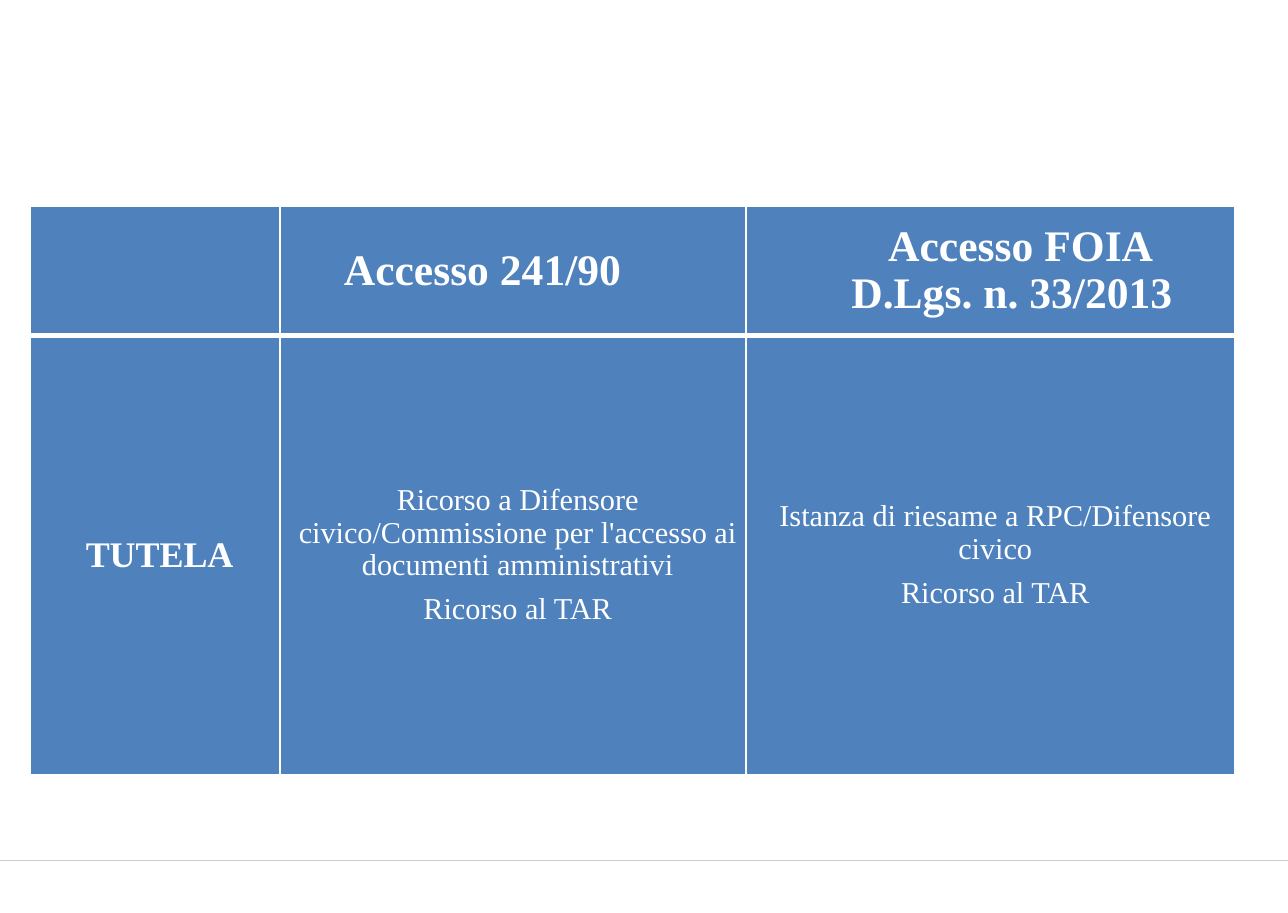
from dataclasses import dataclass

from lxml import etree
from pptx import Presentation
from pptx.dml.color import RGBColor
from pptx.enum.shapes import MSO_CONNECTOR
from pptx.enum.text import MSO_ANCHOR, PP_ALIGN
from pptx.oxml.ns import qn
from pptx.util import Inches, Pt

LINE = MSO_CONNECTOR.STRAIGHT
MIDDLE = MSO_ANCHOR.MIDDLE
LEFT, CENTER = PP_ALIGN.LEFT, PP_ALIGN.CENTER


@dataclass(frozen=True)
class Theme:
    font: str = "Times New Roman"
    blue: str = "4F81BD"
    white: str = "FFFFFF"
    grey: str = "CCCCCC"
    head: int = 23
    label: int = 19
    body: int = 16


theme = Theme()


def write(cell, text, size=theme.body, bold=False, align=CENTER,
          margin=0.07, indent=0, spacing=0.97, gap=6):
    """Fill a cell with one paragraph per line of text."""
    frame = cell.text_frame
    frame.text = text
    for i, para in enumerate(frame.paragraphs):
        props = para._p.get_or_add_pPr()
        props.set("marL", str(Inches(margin)))
        props.set("indent", str(Inches(indent)))
        para.alignment = align
        para.line_spacing = spacing
        if i:
            para.space_before = Pt(gap)
        para.font.name = theme.font
        para.font.size = Pt(size)
        para.font.bold = bold
        para.font.color.rgb = RGBColor.from_string(theme.white)


def edge(cell, side, width):
    """Draw one white border of a cell."""
    props = cell._tc.get_or_add_tcPr()
    line = etree.SubElement(props, qn(f"a:ln{side}"), w=str(Pt(width)))
    fill = etree.SubElement(line, qn("a:solidFill"))
    etree.SubElement(fill, qn("a:srgbClr"), val=theme.white)


deck = Presentation()
deck.slide_width, deck.slide_height = Inches(9.44), Inches(6.69)
slide = deck.slides.add_slide(deck.slide_layouts[6])

# Footer rule
rule = slide.shapes.add_connector(LINE, 0, Inches(6.3), deck.slide_width, Inches(6.3))
rule.line.color.rgb = RGBColor.from_string(theme.grey)
rule.line.width = Pt(0.25)
etree.SubElement(rule._element.spPr, qn("a:effectLst"))

# Comparison table
widths = [1.83, 3.42, 3.58]
heights = [0.95, 3.22]
table = slide.shapes.add_table(
    len(heights), len(widths), Inches(0.22), Inches(1.51),
    Inches(sum(widths)), Inches(sum(heights))).table
table.horz_banding = False
for col, width in zip(table.columns, widths):
    col.width = Inches(width)
for row, height in zip(table.rows, heights):
    row.height = Inches(height)

for r, row in enumerate(table.rows):
    top, bottom = (1, 3) if r == 0 else (3, 1)
    for cell in row.cells:
        for side, width in zip("LRTB", (1, 1, top, bottom)):
            edge(cell, side, width)
        cell.fill.solid()
        cell.fill.fore_color.rgb = RGBColor.from_string(theme.blue)
        cell.vertical_anchor = MIDDLE
        cell.margin_left = cell.margin_right = 0
        cell.margin_top = cell.margin_bottom = 0

head = dict(size=theme.head, bold=True, align=LEFT)
write(table.cell(0, 1), "Accesso 241/90", margin=0.47, spacing=1.0, **head)
write(table.cell(0, 2), "Accesso FOIA D.Lgs. n. 33/2013", margin=0.77, indent=0.27, **head)
write(table.cell(1, 0), "TUTELA", size=theme.label, bold=True, spacing=1.0)
write(table.cell(1, 1), "Ricorso a Difensore civico/Commissione per l'accesso ai "
                        "documenti amministrativi\nRicorso al TAR")
write(table.cell(1, 2), "Istanza di riesame a RPC/Difensore civico\nRicorso al TAR")

deck.save("out.pptx")
